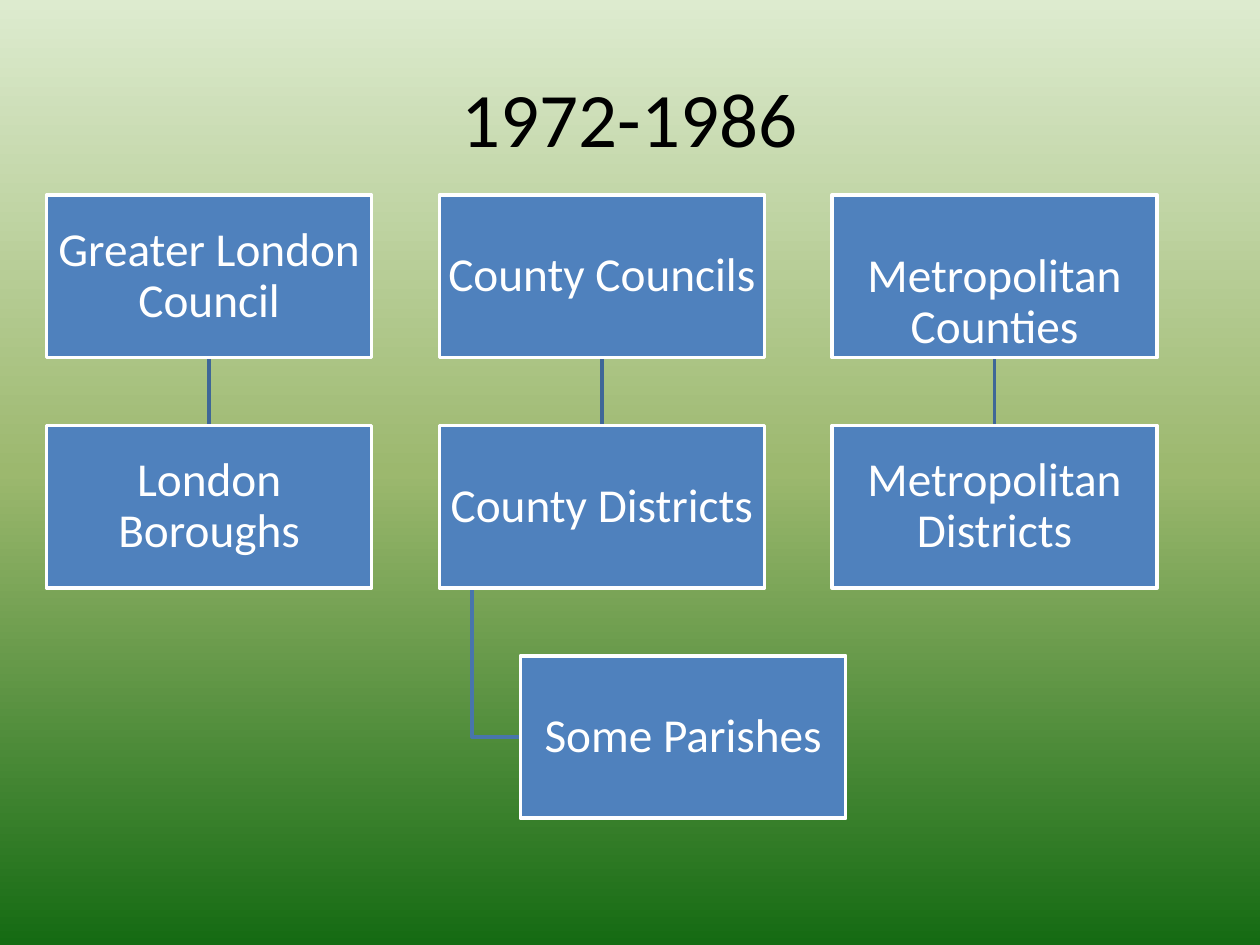
"""Build a slide charting the tiers of English local government, 1972-1986."""
from copy import deepcopy

from lxml.etree import SubElement
from pptx import Presentation
from pptx.dml.color import RGBColor
from pptx.enum.shapes import MSO_CONNECTOR, MSO_SHAPE
from pptx.enum.text import MSO_ANCHOR, PP_ALIGN
from pptx.oxml.ns import qn
from pptx.util import Pt

TITLE = "1972-1986"
COLUMNS = [
    ("Greater London Council", "London Boroughs"),
    ("County Councils", "County Districts"),
    ("Metropolitan Counties", "Metropolitan Districts"),
]
PARISHES = "Some Parishes"
LOWERED = "Metropolitan Counties"
COLORS = {"box": "4F81BD", "white": "FFFFFF", "black": "000000",
          "link": "3F6797", "elbow": "4875AC"}
BACKGROUND = [(0, "DDEBCF"), (0.5, "9CB86E"), (1, "156B13")]
FONT = "Calibri"
LEFT, TOP, WIDTH, HEIGHT = 26.6, 111.5, 185.8, 92.9
COLUMN_STEP, ROW_STEP = 224.4, 131.6
INSET, LINE_DROP = 1.5, 29.6


def paint_background(page):
    fill = page.background.fill
    fill.gradient()
    fill.gradient_angle = 270
    stops = page._element.find(".//" + qn("a:gsLst"))
    stops.append(deepcopy(stops[0]))
    for stop, (position, color) in zip(fill.gradient_stops, BACKGROUND):
        stop.position = position
        stop.color.rgb = RGBColor.from_string(color)


def write(shape, text, size, color):
    frame = shape.text_frame
    frame.word_wrap = True
    frame.vertical_anchor = MSO_ANCHOR.MIDDLE
    para = frame.paragraphs[0]
    para.alignment = PP_ALIGN.CENTER
    span = para.add_run()
    span.text = text
    span.font.name = FONT
    span.font.size = Pt(size)
    span.font.color.rgb = RGBColor.from_string(COLORS[color])
    return frame


def style_line(shape, color):
    shape.line.color.rgb = RGBColor.from_string(COLORS[color])
    shape.line.width = Pt(2)


def add_box(page, text, left, top):
    box = page.shapes.add_shape(MSO_SHAPE.RECTANGLE, Pt(left), Pt(top), Pt(WIDTH), Pt(HEIGHT))
    box.shadow.inherit = False
    box.fill.solid()
    box.fill.fore_color.rgb = RGBColor.from_string(COLORS["box"])
    style_line(box, "white")
    frame = write(box, text, 27, "white")
    frame.paragraphs[0].line_spacing = 0.9
    frame.margin_left = frame.margin_right = frame.margin_bottom = Pt(INSET)
    frame.margin_top = Pt(INSET + (LINE_DROP if text == LOWERED else 0))
    return box


def send_to_back(page, shape):
    page.shapes._spTree.insert(2, shape._element)


def add_link(page, upper, lower):
    link = page.shapes.add_connector(MSO_CONNECTOR.STRAIGHT, 0, 0, 0, 0)
    link.begin_connect(upper, 2)
    link.end_connect(lower, 0)
    style_line(link, "link")
    SubElement(link._element.spPr, qn("a:effectLst"))
    send_to_back(page, link)


def add_elbow(page, upper, lower):
    start_x = upper.left + upper.width // 10
    middle = lower.top + lower.height // 2
    builder = page.shapes.build_freeform(start_x, upper.top + upper.height)
    builder.add_line_segments([(start_x, middle), (lower.left, middle)], close=False)
    elbow = builder.convert_to_shape()
    elbow.shadow.inherit = False
    elbow.fill.background()
    style_line(elbow, "elbow")
    send_to_back(page, elbow)


def main():
    deck = Presentation()
    deck.slide_width, deck.slide_height = Pt(720), Pt(540)
    page = deck.slides.add_slide(deck.slide_layouts[6])
    paint_background(page)
    title = page.shapes.add_textbox(Pt(36), Pt(21.6), Pt(648), Pt(90))
    write(title, TITLE, 44, "black")

    districts = []
    for column, names in enumerate(COLUMNS):
        left = LEFT + column * COLUMN_STEP
        upper, lower = [add_box(page, name, left, TOP + row * ROW_STEP)
                        for row, name in enumerate(names)]
        add_link(page, upper, lower)
        districts.append(lower)

    parishes = add_box(page, PARISHES, LEFT + COLUMN_STEP + WIDTH / 4, TOP + 2 * ROW_STEP)
    add_elbow(page, districts[1], parishes)
    deck.save("out.pptx")


if __name__ == "__main__":
    main()
